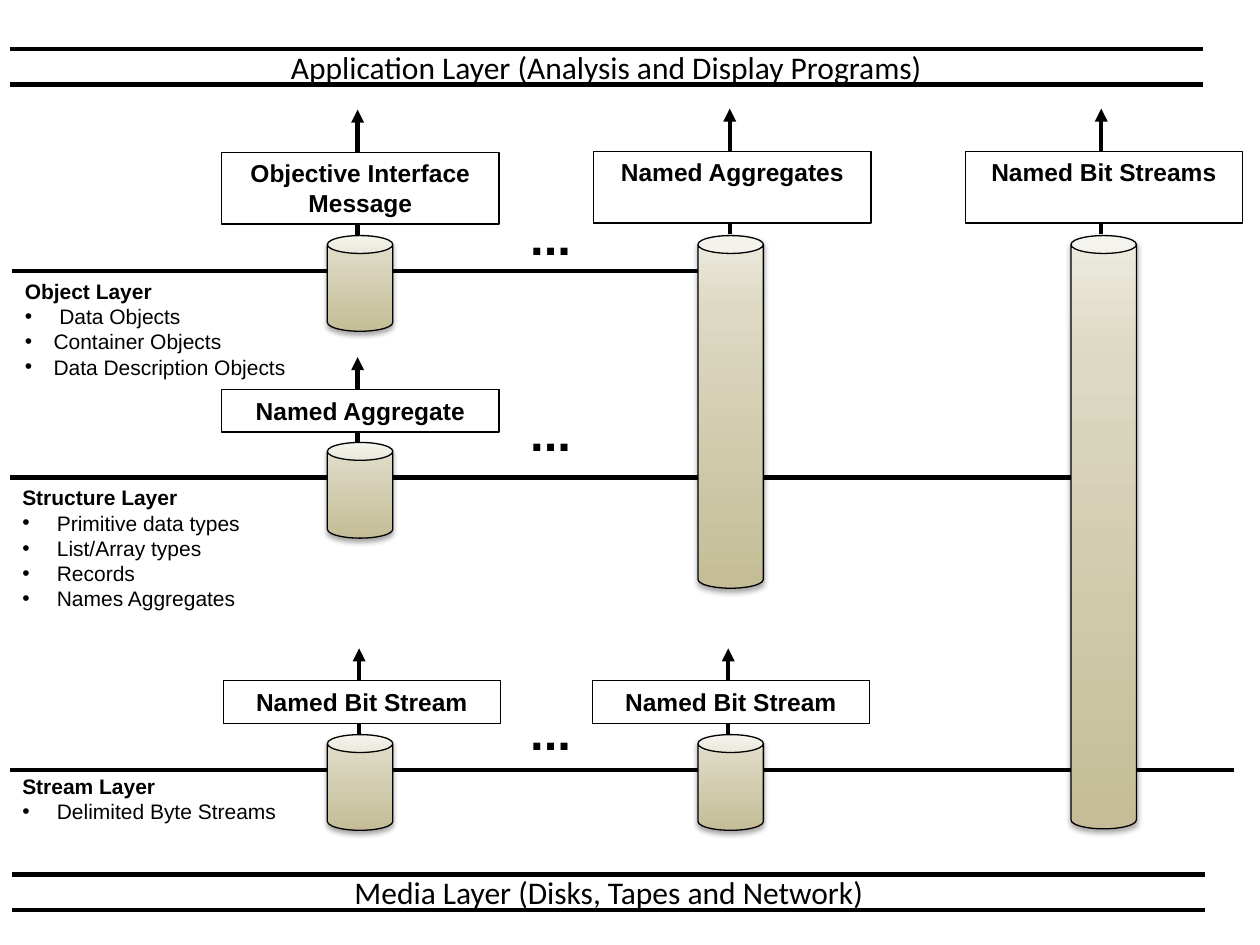
from copy import deepcopy

from lxml.etree import SubElement
from pptx import Presentation
from pptx.dml.color import RGBColor
from pptx.enum.shapes import MSO_CONNECTOR, MSO_SHAPE
from pptx.enum.text import MSO_ANCHOR, PP_ALIGN
from pptx.oxml import parse_xml
from pptx.oxml.ns import nsdecls, qn
from pptx.util import Cm, Pt

BLACK = RGBColor(0x00, 0x00, 0x00)
WHITE = RGBColor(0xFF, 0xFF, 0xFF)
CAN_STOPS = [
    (0, RGBColor(0xC4, 0xBD, 0x97)),
    (0.8, RGBColor(0xDD, 0xD9, 0xC3)),
    (1, RGBColor(0xEE, 0xEC, 0xE1)),
]
CAN_SHADOW = f"""<a:effectLst {nsdecls('a')}>
  <a:outerShdw blurRad="39400" dist="22900" dir="5400000" rotWithShape="0">
    <a:srgbClr val="000000"><a:alpha val="35000"/></a:srgbClr>
  </a:outerShdw>
</a:effectLst>"""

presentation = Presentation()
presentation.slide_width = Cm(25.4)
presentation.slide_height = Cm(19.05)
slide = presentation.slides.add_slide(presentation.slide_layouts[6])
shapes = slide.shapes


def add_line(x1, y1, x2, y2, arrow=False):
    line = shapes.add_connector(MSO_CONNECTOR.STRAIGHT, Cm(x1), Cm(y1), Cm(x2), Cm(y2))
    line.line.color.rgb = BLACK
    line.line.width = Pt(2.5)
    if arrow:
        SubElement(line.line._get_or_add_ln(), qn("a:tailEnd"), type="triangle")
    SubElement(line._element.spPr, qn("a:effectLst"))


def add_run(paragraph, text, size, bold=False, font_name="Arial"):
    run = paragraph.add_run()
    run.text = text
    run.font.name = font_name
    run.font.size = Pt(size)
    run.font.bold = bold
    run.font.color.rgb = BLACK


# Application and media bars
BAR_WIDTH, BAR_HEIGHT = 24.05, 0.71
for left, top, text in [
    (0.2, 0.99, "Application Layer (Analysis and Display Programs)"),
    (0.25, 17.63, "Media Layer (Disks, Tapes and Network)"),
]:
    bar = shapes.add_textbox(Cm(left), Cm(top), Cm(BAR_WIDTH), Cm(BAR_HEIGHT))
    frame = bar.text_frame
    frame.word_wrap = True
    frame.vertical_anchor = MSO_ANCHOR.MIDDLE
    frame.paragraphs[0].alignment = PP_ALIGN.CENTER
    add_run(frame.paragraphs[0], text, 18, font_name="Calibri")
    for y in (top, top + BAR_HEIGHT):
        add_line(left, y, left + BAR_WIDTH, y)

# Layer lines, broken where they meet the cans
CAN_WIDTH, CAN_HEIGHT = 1.32, 1.93
CAN_COLUMNS = [6.6, 14.07, 21.59]
OBJECT_TOP, STRUCTURE_TOP, STREAM_TOP = 4.75, 8.92, 14.81
first, second, third = CAN_COLUMNS
for can_top, segments in [
    (OBJECT_TOP, [(0.25, first), (first + CAN_WIDTH, second)]),
    (STRUCTURE_TOP, [(0.2, first), (first + CAN_WIDTH, third)]),
    (STREAM_TOP, [(0.2, first), (first + CAN_WIDTH, second), (second + CAN_WIDTH, 24.87)]),
]:
    for start, end in segments:
        add_line(start, can_top + 0.71, end, can_top + 0.71)

# Cans
for left, top, height in [
    (first, OBJECT_TOP, CAN_HEIGHT),
    (first, STRUCTURE_TOP, CAN_HEIGHT),
    (first, STREAM_TOP, CAN_HEIGHT),
    (second, STREAM_TOP, CAN_HEIGHT),
    (third, OBJECT_TOP, 11.96),
    (second, OBJECT_TOP, 7.11),
]:
    can = shapes.add_shape(MSO_SHAPE.CAN, Cm(left), Cm(top), Cm(CAN_WIDTH), Cm(height))
    can.adjustments[0] = 0.273
    can.line.color.rgb = BLACK
    can.line.width = Pt(0.75)
    can.fill.gradient()
    can.fill.gradient_angle = 90
    stop_list = can._element.spPr.find(".//" + qn("a:gsLst"))
    stop_list.append(deepcopy(stop_list[-1]))
    for stop, (position, color) in zip(can.fill.gradient_stops, CAN_STOPS):
        stop.position = position
        stop.color.rgb = color
    can._element.spPr.append(parse_xml(CAN_SHADOW))

# Named boxes, each crossed by an upward arrow
BOX_WIDTH, TALL, SHORT = 5.59, 1.45, 0.86
for center, top, height, rise, text in [
    (7.21, 3.07, TALL, 0.86, "Objective Interface Message"),
    (7.21, 7.85, SHORT, 0.65, "Named Aggregate"),
    (7.24, 13.72, SHORT, 0.65, "Named Bit Stream"),
    (14.68, 13.72, SHORT, 0.65, "Named Bit Stream"),
    (14.71, 3.05, TALL, 0.86, "Named Aggregates"),
    (22.2, 3.05, TALL, 0.86, "Named Bit Streams"),
]:
    add_line(center, top + height + 0.22, center, top - rise, arrow=True)
    box = shapes.add_shape(
        MSO_SHAPE.RECTANGLE, Cm(center - 2.74), Cm(top), Cm(BOX_WIDTH), Cm(height)
    )
    box.shadow.inherit = False
    box.fill.solid()
    box.fill.fore_color.rgb = WHITE
    box.line.color.rgb = BLACK
    box.line.width = Pt(0.75)
    frame = box.text_frame
    frame.word_wrap = True
    frame.vertical_anchor = MSO_ANCHOR.TOP
    frame.paragraphs[0].alignment = PP_ALIGN.CENTER
    add_run(frame.paragraphs[0], text, 14, bold=True)

# Layer descriptions
for left, top, height, heading, items in [
    (0.2, 15.47, 1.28, "Stream Layer", [" Delimited Byte Streams"]),
    (0.2, 9.65, 2.82, "Structure Layer",
     [" Primitive data types", " List/Array types", " Records", " Names Aggregates"]),
    (0.25, 5.49, 2.3, "Object Layer",
     [" Data Objects", "Container Objects", "Data Description Objects"]),
]:
    description = shapes.add_textbox(Cm(left), Cm(top), Cm(6), Cm(height))
    frame = description.text_frame
    frame.word_wrap = True
    add_run(frame.paragraphs[0], heading, 12, bold=True)
    for item in items:
        paragraph = frame.add_paragraph()
        properties = paragraph._p.get_or_add_pPr()
        properties.set("marL", str(Cm(0.58)))
        properties.set("indent", str(-Cm(0.58)))
        SubElement(properties, qn("a:buFont"), typeface="Arial")
        SubElement(properties, qn("a:buChar"), char="•")
        add_run(paragraph, item, 12)

# Ellipses between the columns
for top in (4.04, 14.02, 7.98):
    dots = shapes.add_textbox(Cm(10.44), Cm(top), Cm(1.85), Cm(1.45))
    dots.text_frame.word_wrap = True
    add_run(dots.text_frame.paragraphs[0], "...", 28, bold=True)

presentation.save("out.pptx")
